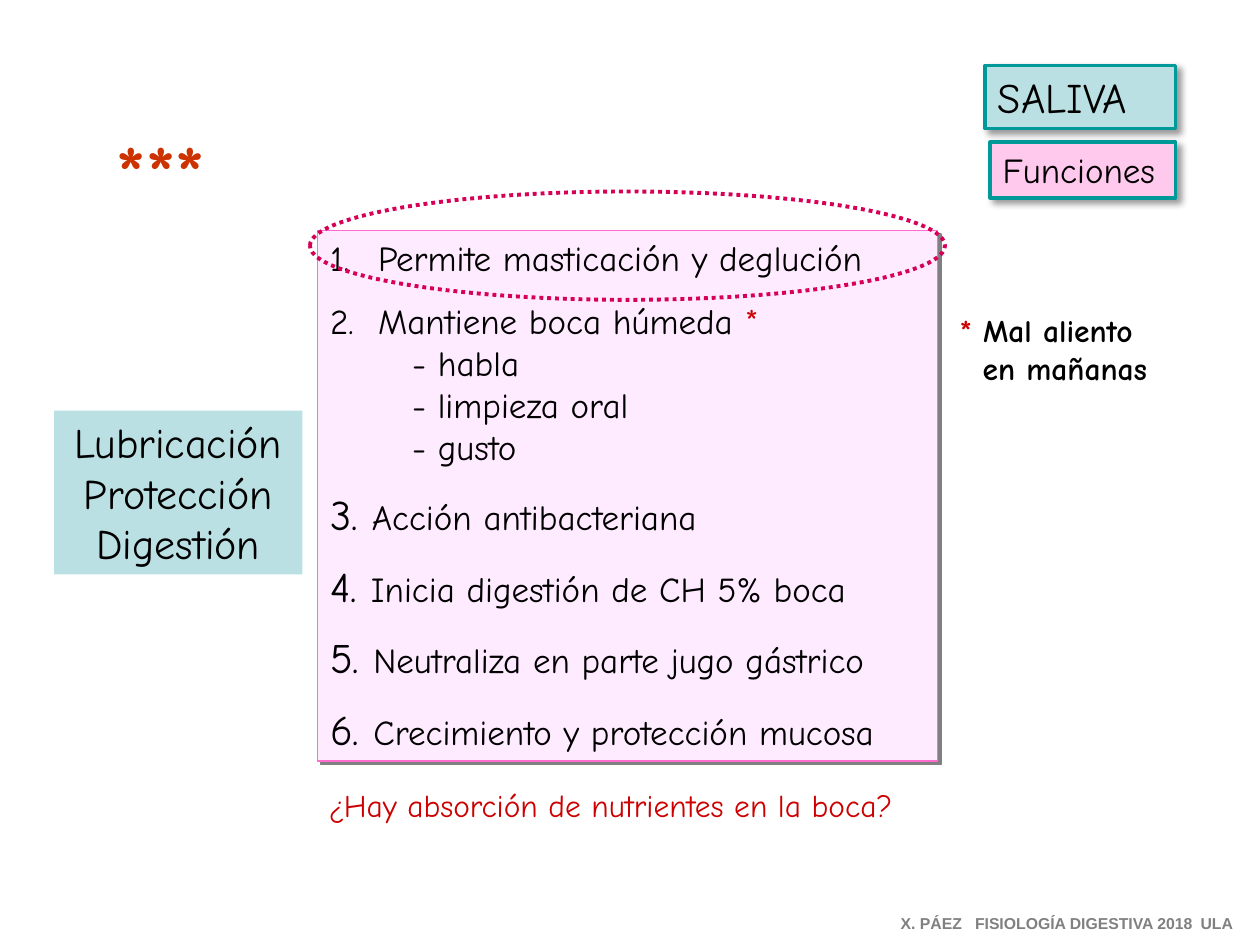
import lxml.etree
import pptx
import pptx.dml.color
import pptx.enum.dml
import pptx.enum.shapes
import pptx.enum.text
import pptx.oxml.ns
import pptx.util

Inches = pptx.util.Inches
Pt = pptx.util.Pt
ALIGN = pptx.enum.text.PP_ALIGN
SHAPE = pptx.enum.shapes.MSO_SHAPE
HAND_FONT = "Comic Neue"
RED = "CC0000"


def color(value):
    return pptx.dml.color.RGBColor.from_string(value)


def add_element(parent, tag, **attributes):
    values = {name: str(value) for name, value in attributes.items()}
    return lxml.etree.SubElement(parent, pptx.oxml.ns.qn(tag), values)


def add_shadow(effects, value, opacity, blur, distance):
    shadow = add_element(effects, "a:outerShdw", blurRad=Pt(blur), dist=Pt(distance),
                         dir=45 * 60000, algn="tl", rotWithShape=0)
    shade = add_element(shadow, "a:srgbClr", val=value)
    add_element(shade, "a:alpha", val=opacity * 1000)


def style_shape(shape, fill=None, line=None, width=0, shadow=None):
    shape.shadow.inherit = False
    if fill:
        shape.fill.solid()
        shape.fill.fore_color.rgb = color(fill)
    else:
        shape.fill.background()
    if line:
        shape.line.color.rgb = color(line)
        shape.line.width = Pt(width)
    else:
        shape.line.fill.background()
    if shadow:
        effects = shape._element.spPr.find(pptx.oxml.ns.qn("a:effectLst"))
        add_shadow(effects, *shadow)


def place(shape, box):
    shape.left, shape.top, shape.width, shape.height = map(Inches, box)


def prepare_frame(shape):
    frame = shape.text_frame
    frame.word_wrap = True
    frame.auto_size = pptx.enum.text.MSO_AUTO_SIZE.NONE
    frame.vertical_anchor = pptx.enum.text.MSO_ANCHOR.TOP
    return frame


def next_paragraph(frame):
    first = frame.paragraphs[0]
    return frame.add_paragraph() if first.runs else first


def format_paragraph(paragraph, size, value="000000", bold=False, align=ALIGN.LEFT,
                     name=HAND_FONT):
    paragraph.alignment = align
    font = paragraph.font
    font.name, font.size, font.bold = name, Pt(size), bold
    font.color.rgb = color(value)


def write_lines(shape, lines, size, **style):
    frame = prepare_frame(shape)
    for line in lines:
        paragraph = next_paragraph(frame)
        paragraph.add_run().text = line
        format_paragraph(paragraph, size, **style)
    return frame


def add_text(slide, box, lines, size, **style):
    shape = slide.shapes.add_textbox(*map(Inches, box))
    return write_lines(shape, lines, size, **style)


def set_indent(paragraph, left, first=0):
    properties = paragraph._p.get_or_add_pPr()
    properties.set("marL", str(Inches(left)))
    properties.set("indent", str(Inches(first)))
    return properties


def add_heading(shape, box, text, size, fill):
    place(shape, box)
    style_shape(shape, fill, "009999", 2.25, ("000000", 40, 4, 3))
    write_lines(shape, [text], size)


def add_function_item(frame, number, text, marked):
    paragraph = next_paragraph(frame)
    properties = set_indent(paragraph, 0.38, -0.38)
    if number <= 2:
        add_element(properties, "a:buFont", typeface=HAND_FONT)
        add_element(properties, "a:buAutoNum", type="arabicPeriod", startAt=number)
    else:
        add_element(properties, "a:buNone")
        number_run = paragraph.add_run()
        number_run.text = f"{number}. "
        number_run.font.size = Pt(24)
    paragraph.add_run().text = text
    if marked:
        mark = paragraph.add_run()
        mark.text = " *"
        mark.font.color.rgb = color(RED)
    paragraph.space_before = Pt(0 if number == 1 else 12)
    format_paragraph(paragraph, 20)


def add_detail(frame, text):
    paragraph = next_paragraph(frame)
    add_element(set_indent(paragraph, 0.65), "a:buNone")
    paragraph.add_run().text = f"- {text}"
    paragraph.space_before = Pt(0)
    format_paragraph(paragraph, 20)


def add_functions(shape, box):
    place(shape, box)
    style_shape(shape, "FFEBFF", "FF6BCE", 0.75, ("808080", 100, 0, 2.8))
    frame = prepare_frame(shape)
    items = [
        ("Permite masticación y deglución", []),
        ("Mantiene boca húmeda", ["habla", "limpieza oral", "gusto"]),
        ("Acción antibacteriana", []),
        ("Inicia digestión de CH 5% boca", []),
        ("Neutraliza en parte jugo gástrico", []),
        ("Crecimiento y protección mucosa", []),
    ]
    for number, (text, details) in enumerate(items, 1):
        add_function_item(frame, number, text, marked=bool(details))
        for detail in details:
            add_detail(frame, detail)


def add_highlight(slide, box):
    ellipse = slide.shapes.add_shape(SHAPE.OVAL, *map(Inches, box))
    style_shape(ellipse, line="D60057", width=2.25)
    ellipse.line.dash_style = pptx.enum.dml.MSO_LINE.ROUND_DOT


def add_breath_note(slide, box):
    frame = add_text(slide, box, ["* ", "en mañanas"], 18, bold=True)
    first, second = frame.paragraphs
    first.runs[0].font.color.rgb = color(RED)
    first.add_run().text = "Mal aliento"
    set_indent(second, 0.18)


def add_roles(slide, box):
    shape = slide.shapes.add_shape(SHAPE.RECTANGLE, *map(Inches, box))
    style_shape(shape, "BBE0E3")
    write_lines(shape, ["Lubricación", "Protección", "Digestión"], 24, align=ALIGN.CENTER)


def add_stars(slide, box):
    frame = add_text(slide, box, ["***"], 44, value="CC3300", bold=True, align=ALIGN.CENTER)
    run = frame.paragraphs[0].runs[0]
    effects = add_element(run._r.get_or_add_rPr(), "a:effectLst")
    add_shadow(effects, "000000", 100, 0, 3)


def add_credit(slide, box):
    frame = add_text(slide, box, [], 9)
    frame.margin_right = 0
    paragraph = frame.paragraphs[0]
    tabs = add_element(paragraph._p.get_or_add_pPr(), "a:tabLst")
    for position in (0.59, 2.38):
        add_element(tabs, "a:tab", pos=Inches(position), algn="l")
    paragraph.add_run().text = "X. PÁEZ\tFISIOLOGÍA DIGESTIVA 2018\tULA"
    format_paragraph(paragraph, 9, "808080", bold=True, name="Arial")


def build_slide(presentation):
    slide = presentation.slides.add_slide(presentation.slide_layouts[1])
    title, body = slide.placeholders[0], slide.placeholders[1]
    add_heading(title, (7.82, 0.52, 1.51, 0.5), "SALIVA", 24, "BBE0E3")
    subtitle_box = (7.86, 1.13, 1.47, 0.44)
    subtitle = slide.shapes.add_shape(SHAPE.RECTANGLE, *map(Inches, subtitle_box))
    add_heading(subtitle, subtitle_box, "Funciones", 20, "FFC9ED")
    add_functions(body, (2.52, 1.83, 4.92, 4.21))
    add_text(slide, (2.51, 6.19, 4.97, 0.4), ["¿Hay absorción de nutrientes en la boca?"],
             18, value=RED)
    add_highlight(slide, (2.46, 1.52, 5.04, 0.86))
    add_breath_note(slide, (7.52, 2.42, 1.91, 0.71))
    add_roles(slide, (0.43, 3.26, 1.97, 1.3))
    add_stars(slide, (0.59, 0.93, 1.37, 0.84))
    add_credit(slide, (7.05, 7.2, 2.86, 0.25))


def main():
    presentation = pptx.Presentation()
    presentation.slide_width, presentation.slide_height = Inches(10), Inches(7.5)
    build_slide(presentation)
    presentation.save("out.pptx")


if __name__ == "__main__":
    main()
